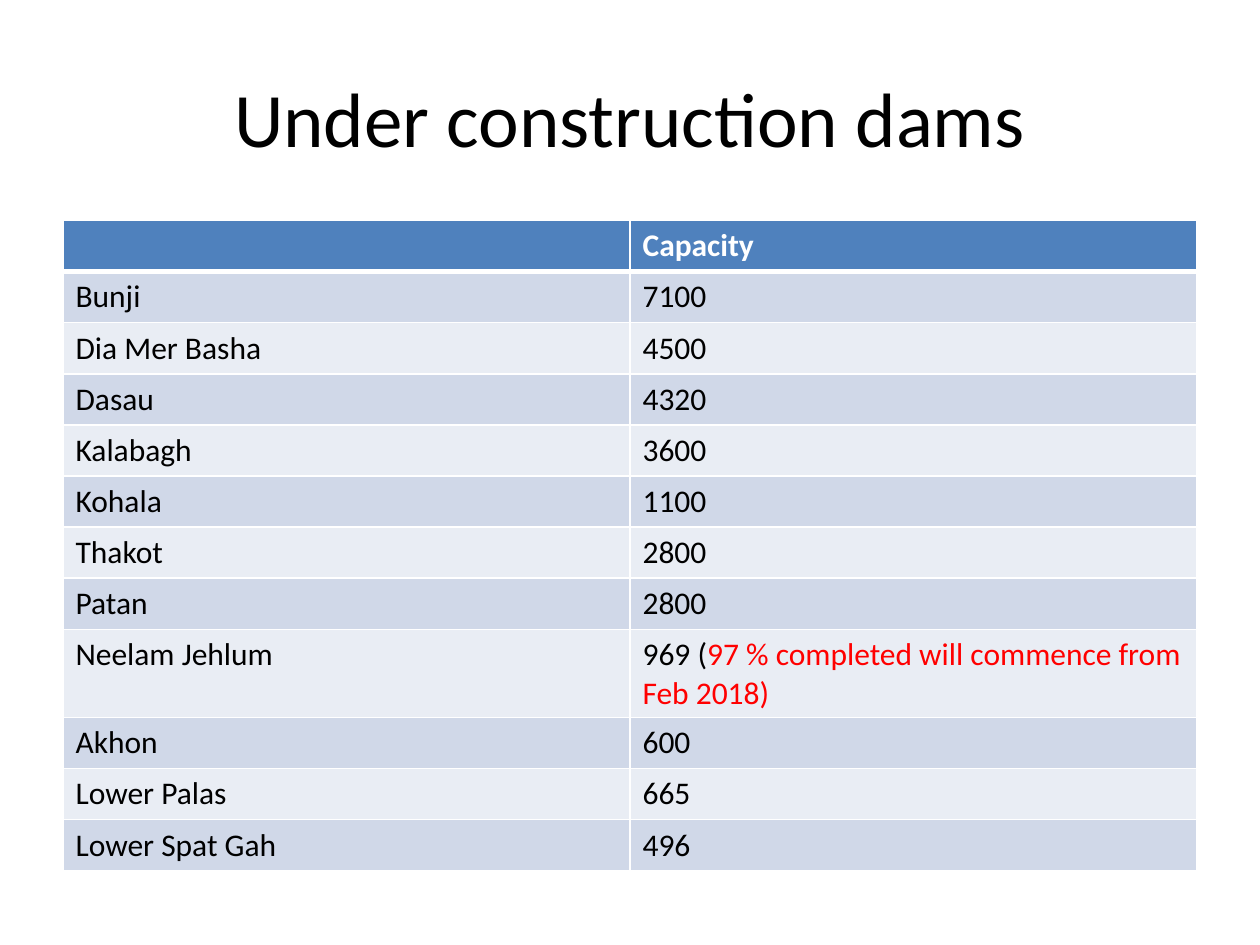
from lxml import etree
from pptx import Presentation
from pptx.dml.color import RGBColor
from pptx.enum import text
from pptx.oxml import ns
from pptx.util import Inches, Pt


def add_run(paragraph, wording, size, color, bold=False):
    run = paragraph.add_run()
    run.text = wording
    run.font.name = "Calibri"
    run.font.size = Pt(size)
    run.font.bold = bold
    run.font.color.rgb = RGBColor.from_string(color)


def add_border(cell, side, points):
    line = etree.SubElement(cell._tc.get_or_add_tcPr(), ns.qn("a:ln" + side), w=str(Pt(points)))
    fill = etree.SubElement(line, ns.qn("a:solidFill"))
    etree.SubElement(fill, ns.qn("a:srgbClr"), val="FFFFFF")


deck = Presentation()
deck.slide_width = Inches(10)
deck.slide_height = Inches(7.5)
slide = deck.slides.add_slide(deck.slide_layouts[6])

title = slide.shapes.add_textbox(Inches(0.5), Inches(0.3), Inches(9), Inches(1.25)).text_frame
title.word_wrap = True
title.vertical_anchor = text.MSO_ANCHOR.MIDDLE
title.paragraphs[0].alignment = text.PP_ALIGN.CENTER
add_run(title.paragraphs[0], "Under construction dams", 44, "000000")

dams = [
    ("", "Capacity"),
    ("Bunji", "7100"),
    ("Dia Mer Basha", "4500"),
    ("Dasau", "4320"),
    ("Kalabagh", "3600"),
    ("Kohala", "1100"),
    ("Thakot", "2800"),
    ("Patan", "2800"),
    ("Neelam Jehlum", "969 ("),
    ("Akhon", "600"),
    ("Lower Palas", "665"),
    ("Lower Spat Gah", "496"),
]
progress = {"969 (": "97 % completed will commence from Feb 2018)"}

capacities = slide.shapes.add_table(
    len(dams), 2, Inches(0.5), Inches(1.75), Inches(9), Inches(4.87)
).table

for row, dam in enumerate(dams):
    header = row == 0
    band = "4F81BD" if header else ("E9EDF4", "D0D8E8")[row % 2]
    for column, wording in enumerate(dam):
        cell = capacities.cell(row, column)
        for side in "LRTB":
            under_header = (row, side) in [(0, "B"), (1, "T")]
            add_border(cell, side, 3 if under_header else 1)
        cell.fill.solid()
        cell.fill.fore_color.rgb = RGBColor.from_string(band)
        paragraph = cell.text_frame.paragraphs[0]
        if wording:
            add_run(paragraph, wording, 18, "FFFFFF" if header else "000000", header)
        if wording in progress:
            add_run(paragraph, progress[wording], 18, "FF0000")

deck.save("out.pptx")
